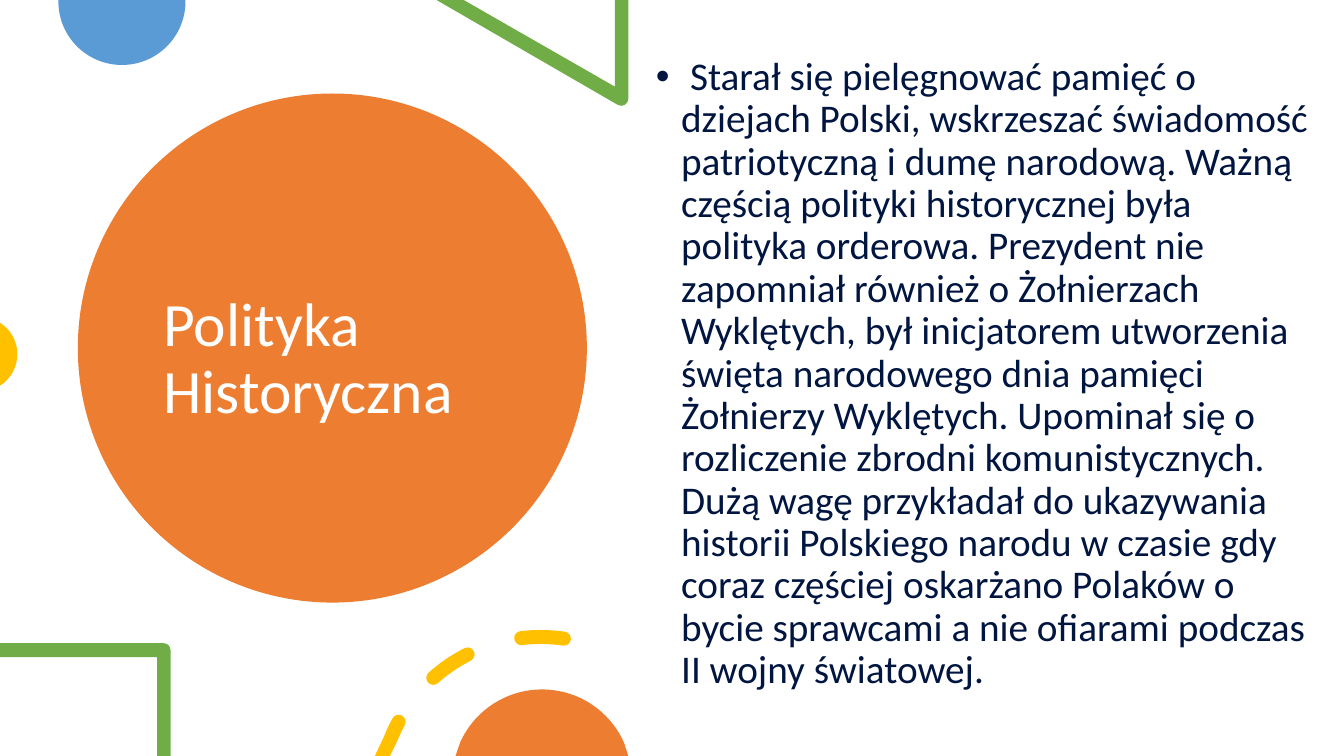
import math

from lxml import etree
from pptx import Presentation
from pptx import util as u
from pptx.dml import color
from pptx.enum import shapes, text

SLIDE_W, SLIDE_H = 960, 540
COLORS = {
    "orange": "ED7D31",
    "blue": "5B9BD5",
    "green": "70AD47",
    "yellow": "FFC000",
    "white": "FFFFFF",
    "navy": "001540",
}
FONT = "Calibri"
DRAWING = "{http://schemas.openxmlformats.org/drawingml/2006/main}"
TITLE = "Polityka Historyczna"
BODY = (
    " Starał się pielęgnować pamięć o dziejach Polski, wskrzeszać świadomość "
    "patriotyczną i dumę narodową. Ważną częścią polityki historycznej była "
    "polityka orderowa. Prezydent nie zapomniał również o Żołnierzach Wyklętych, "
    "był inicjatorem utworzenia święta narodowego dnia pamięci Żołnierzy Wyklętych. "
    "Upominał się o rozliczenie zbrodni komunistycznych. Dużą wagę przykładał do "
    "ukazywania historii Polskiego narodu w czasie gdy coraz częściej oskarżano "
    "Polaków o bycie sprawcami a nie ofiarami podczas II wojny światowej."
)


def rgb(name):
    return color.RGBColor.from_string(COLORS[name])


def paint(shape, name):
    shape.shadow.inherit = False
    shape.fill.solid()
    shape.fill.fore_color.rgb = rgb(name)
    shape.line.fill.background()


def corners(*points):
    return [[point] for point in points]


def polar(center, radius, angle):
    turn = math.radians(angle)
    return center[0] + radius * math.cos(turn), center[1] + radius * math.sin(turn)


def arc(center, radius, start, end):
    steps = max(1, math.ceil(abs(end - start) / 90))
    sweep = (end - start) / steps
    pull = 4 / 3 * math.tan(math.radians(sweep) / 4) * radius
    curve = [[polar(center, radius, start)]]
    for index in range(steps):
        first = start + index * sweep
        last = first + sweep
        begin, finish = polar(center, radius, first), polar(center, radius, last)
        curve.append([polar(begin, pull, first + 90), polar(finish, -pull, last + 90), finish])
    return curve


def add_outline(slide, box, contours, name):
    contours = [
        [[(u.Pt(x), u.Pt(y)) for x, y in step] for step in contour] for contour in contours
    ]
    ends = [[step[-1] for step in contour] for contour in contours]
    builder = slide.shapes.build_freeform(*ends[0][0])
    for index, contour in enumerate(ends):
        if index:
            builder.move_to(*contour[0])
        builder.add_line_segments(contour[1:], close=True)
    shape = builder.convert_to_shape(u.Pt(box[0]), u.Pt(box[1]))
    paint(shape, name)

    min_x, min_y = (min(point[axis] for contour in ends for point in contour) for axis in (0, 1))
    segments = list(shape._element.iter(DRAWING + "lnTo"))
    steps = [step for contour in contours for step in contour[1:]]
    for segment, step in zip(segments, steps):
        if len(step) == 3:
            segment.tag = DRAWING + "cubicBezTo"
            for position, (x, y) in enumerate(step[:2]):
                control = etree.Element(DRAWING + "pt", x=str(x - min_x), y=str(y - min_y))
                segment.insert(position, control)


def add_paragraph(slide, box, words, size, name, anchor):
    frame = slide.shapes.add_textbox(*map(u.Pt, box)).text_frame
    frame.word_wrap = True
    frame.vertical_anchor = anchor
    paragraph = frame.paragraphs[0]
    paragraph.line_spacing = 0.9
    run = paragraph.add_run()
    run.text = words
    run.font.name = FONT
    run.font.size = u.Pt(size)
    run.font.color.rgb = rgb(name)
    return paragraph


def add_title_disc(slide, box):
    left, top = box[:2]
    disc = slide.shapes.add_shape(shapes.MSO_SHAPE.OVAL, *map(u.Pt, box))
    paint(disc, "orange")
    title_box = (left + 54, top + 30.2, 254.9, 320.4)
    add_paragraph(slide, title_box, TITLE, 44, "white", text.MSO_ANCHOR.MIDDLE)


def add_body(slide, box):
    paragraph = add_paragraph(slide, box, BODY, 28, "navy", text.MSO_ANCHOR.TOP)
    paragraph.space_before = u.Pt(10)
    properties = paragraph._p.get_or_add_pPr()
    properties.set("marL", str(u.Pt(18)))
    properties.set("indent", str(u.Pt(-18)))
    etree.SubElement(properties, DRAWING + "buFont").set("typeface", "Arial")
    etree.SubElement(properties, DRAWING + "buChar").set("char", "•")


def add_top_decor(slide, box):
    half_disc = corners((132.5, 0), (41.7, 0)) + arc((87.1, 1), 45.4, 180, 0)
    add_outline(slide, box, [half_disc], "blue")
    triangle = corners((448.8, 0), (439.2, 0), (439.2, 61.9), (331.2, 0), (311.8, 0))
    triangle += arc((443.8, 70.6), 5, 120, 0)
    add_outline(slide, box, [triangle], "green")


def add_side_decor(slide, box):
    radius, overhang = 26.6, 14.2
    reach = math.degrees(math.acos(overhang / radius))
    segment = arc((-overhang, box[3] / 2), radius, -reach, reach)
    add_outline(slide, box, [segment], "yellow")


def add_bottom_decor(slide, box):
    bottom = box[3]
    frame = corners((0, 0), (0, 10), (112.2, 10), (112.2, bottom), (121.8, bottom))
    frame += arc((116.8, 5), 5, 0, -90)
    add_outline(slide, box, [frame], "green")

    ring, radius, half = (386.2, bottom + 30.2), 115.2, 5

    def cap(angle, turn):
        return arc(polar(ring, radius, angle), half, turn, turn + 180)[1:]

    def dash(start, end):
        return (
            arc(ring, radius + half, start, end)
            + cap(end, end)
            + arc(ring, radius - half, end, start)[1:]
            + cap(start, start + 180)
        )

    cut_dash = (
        corners((267.8, bottom))
        + arc(ring, radius + half, 202, 208.3)
        + cap(208.3, 208.3)
        + arc(ring, radius - half, 208.3, 202)[1:]
        + corners((278.6, bottom))
    )
    add_outline(slide, box, [cut_dash, dash(228.3, 243.1), dash(263.1, 278.3)], "yellow")

    cut_disc = corners((325.4, bottom)) + arc((387.2, bottom + 16.6), 64.1, 204, 336)
    cut_disc += corners((448.8, bottom))
    add_outline(slide, box, [cut_disc], "orange")


def main():
    deck = Presentation()
    deck.slide_width, deck.slide_height = u.Pt(SLIDE_W), u.Pt(SLIDE_H)
    slide = deck.slides.add_slide(deck.slide_layouts[6])
    add_title_disc(slide, (55.6, 66.8, 363.6, 363.6))
    add_top_decor(slide, (0, 0, 450, 76))
    add_side_decor(slide, (0, 231, 12.2, 44))
    add_body(slide, (461.5, 37, 480.2, 455.8))
    add_bottom_decor(slide, (0, 459.4, 450, SLIDE_H - 459.4))
    deck.save("out.pptx")


if __name__ == "__main__":
    main()
